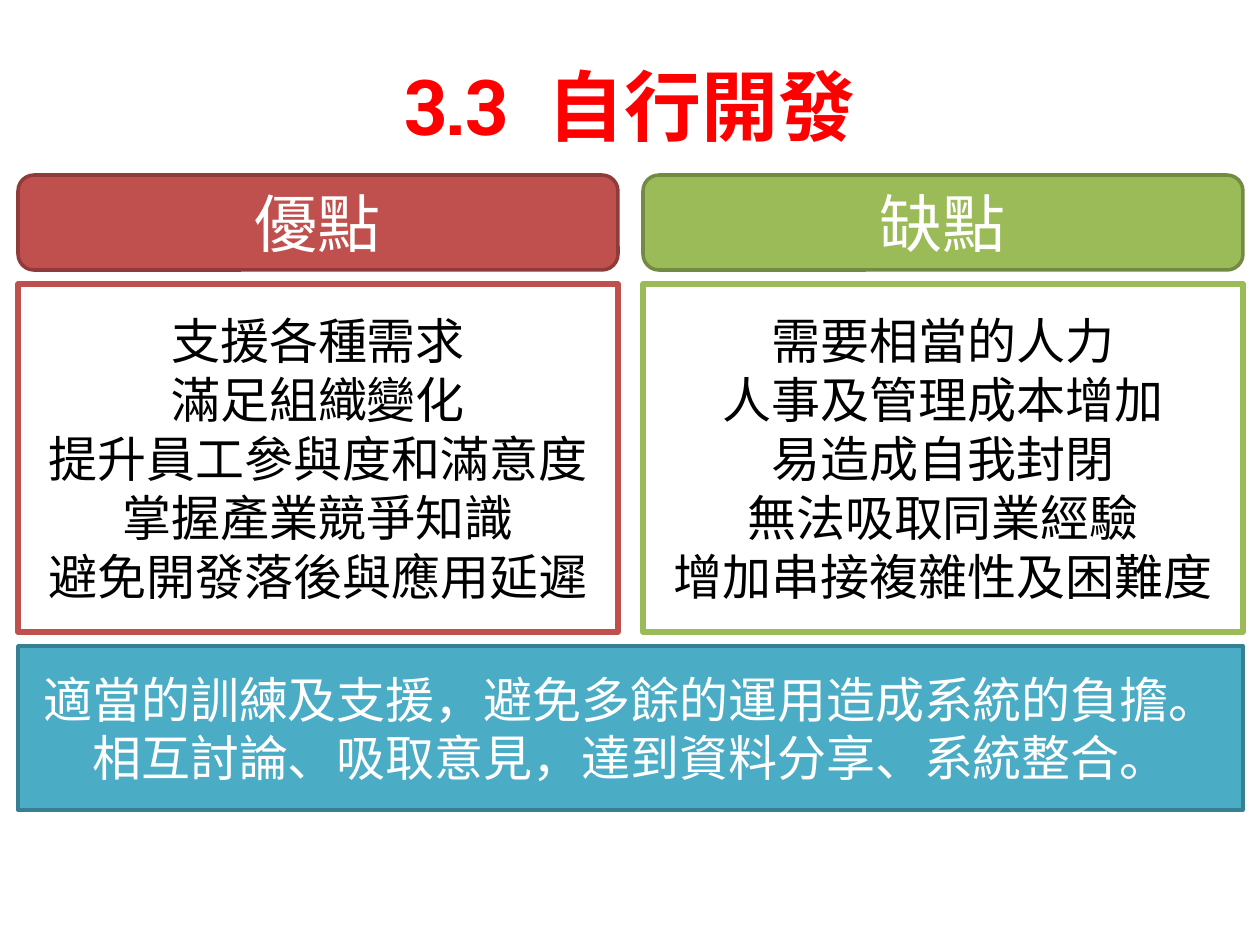
"""Build a slide that compares the pros and cons of in-house development."""
from dataclasses import dataclass

from lxml import etree
from pptx import Presentation
from pptx.dml.color import RGBColor
from pptx.enum.shapes import MSO_SHAPE
from pptx.enum.text import MSO_ANCHOR, PP_ALIGN
from pptx.oxml.ns import qn
from pptx.util import Pt

RECT = MSO_SHAPE.RECTANGLE
ROUNDED = MSO_SHAPE.ROUNDED_RECTANGLE
CENTER = PP_ALIGN.CENTER
MIDDLE = MSO_ANCHOR.MIDDLE
PX = 914400 / 126
FONT = "Roboto Slab"
LEFT, GAP, COLUMN_W = 18, 25, 600
HEADER_Y, HEADER_H = 175, 95
BODY_Y, BODY_H = 284, 348
SUMMARY_Y, SUMMARY_H = 646, 164


@dataclass(frozen=True)
class Box:
    """A filled box with centred text."""
    x: int
    y: int
    w: int
    h: int
    fill: str
    line: str
    line_pt: int
    lines: tuple[str, ...]
    size: int
    color: str
    kind: int = RECT


@dataclass(frozen=True)
class Column:
    """One side of the comparison."""
    heading: str
    color: str
    border: str
    points: tuple[str, ...]


COLUMNS = (
    Column("優點", "C0504D", "8E3B39",
           ("支援各種需求", "滿足組織變化", "提升員工參與度和滿意度",
            "掌握產業競爭知識", "避免開發落後與應用延遲")),
    Column("缺點", "9BBB59", "738A42",
           ("需要相當的人力", "人事及管理成本增加", "易造成自我封閉",
            "無法吸取同業經驗", "增加串接複雜性及困難度")),
)
SUMMARY = "適當的訓練及支援，避免多餘的運用造成系統的負擔。相互討論、吸取意見，達到資料分享、系統整合。"


def emu(px: int) -> int:
    """Turn px into EMU."""
    return round(px * PX)


def rgb(value: str) -> RGBColor:
    """Turn a hex string into a colour."""
    return RGBColor.from_string(value)


def add_run(p, text: str, size: int, color: str, bold: bool = False):
    """Add one styled run to a paragraph."""
    r = p.add_run()
    r.text = text
    r.font.size = Pt(size)
    r.font.name = FONT
    r.font.bold = bold
    r.font.color.rgb = rgb(color)
    etree.SubElement(r.font._element, qn("a:ea")).set("typeface", FONT)
    return r


def add_title(s) -> None:
    """Add the title with a widened gap after its number."""
    tf = s.shapes.add_textbox(emu(63), emu(26), emu(1134), emu(158)).text_frame
    tf.word_wrap = True
    tf.vertical_anchor = MIDDLE
    p = tf.paragraphs[0]
    p.alignment = CENTER
    add_run(p, "3.3", 44, "FF0000", True)
    space = add_run(p, " ", 44, "FF0000", True)
    space.font._element.set("spc", "1200")
    add_run(p, "自行開發", 44, "FF0000", True)


def add_box(s, box: Box) -> None:
    """Draw a box and its lines of text."""
    sp = s.shapes.add_shape(box.kind, emu(box.x), emu(box.y), emu(box.w), emu(box.h))
    sp.shadow.inherit = False
    sp.fill.solid()
    sp.fill.fore_color.rgb = rgb(box.fill)
    sp.line.color.rgb = rgb(box.line)
    sp.line.width = Pt(box.line_pt)
    tf = sp.text_frame
    tf.word_wrap = True
    tf.vertical_anchor = MIDDLE
    for i, text in enumerate(box.lines):
        p = tf.add_paragraph() if i else tf.paragraphs[0]
        p.alignment = CENTER
        add_run(p, text, box.size, box.color)


def main() -> None:
    """Build and save the slide."""
    prs = Presentation()
    prs.slide_width, prs.slide_height = emu(1260), emu(945)
    s = prs.slides.add_slide(prs.slide_layouts[6])
    add_title(s)
    for i, col in enumerate(COLUMNS):
        x = LEFT + i * (COLUMN_W + GAP)
        add_box(s, Box(x, HEADER_Y, COLUMN_W, HEADER_H, col.color, col.border, 2,
                       (col.heading,), 36, "FFFFFF", ROUNDED))
        add_box(s, Box(x, BODY_Y, COLUMN_W, BODY_H, "FFFFFF", col.color, 3,
                       col.points, 28, "000000"))
    add_box(s, Box(LEFT, SUMMARY_Y, 2 * COLUMN_W + GAP, SUMMARY_H, "4BACC6", "377F92", 2,
                   (SUMMARY,), 28, "FFFFFF"))
    prs.save("out.pptx")


if __name__ == "__main__":
    main()
